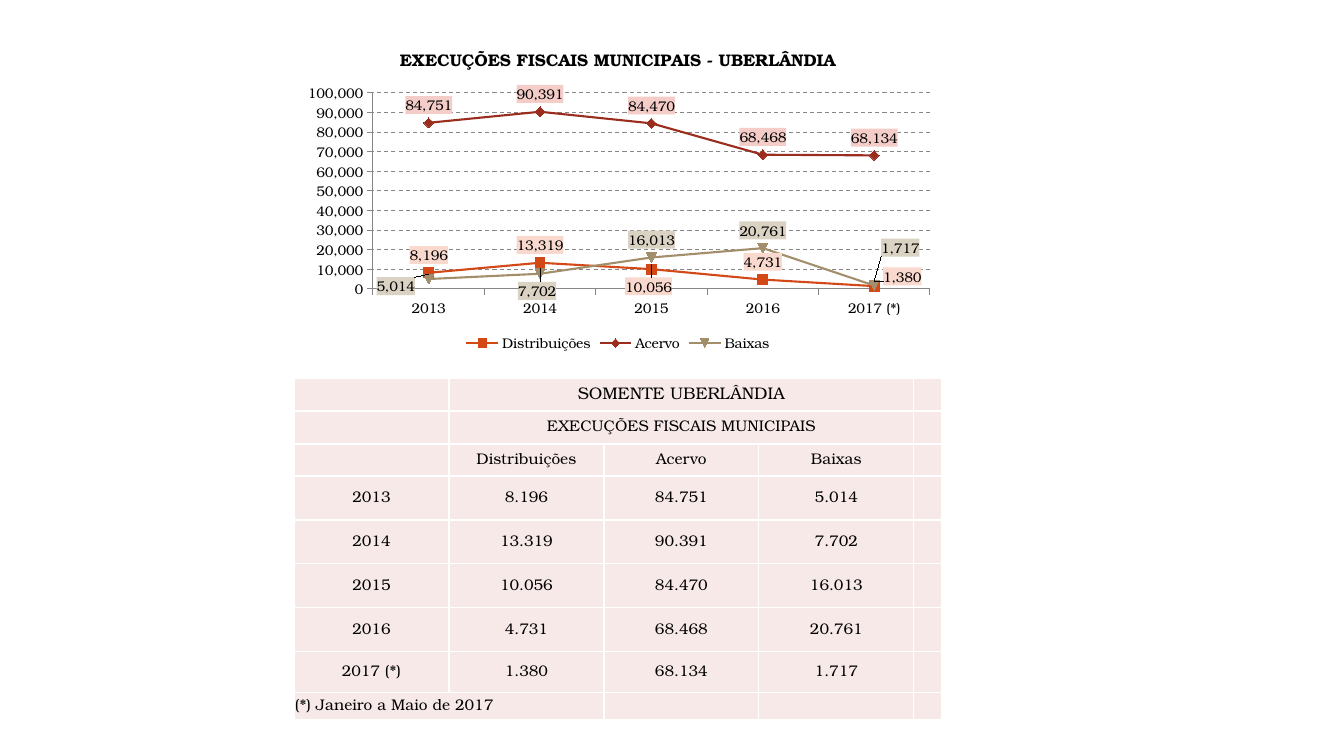
from copy import deepcopy

from lxml.etree import SubElement
from pptx import Presentation
from pptx.chart.data import CategoryChartData
from pptx.dml.color import RGBColor
from pptx.enum.chart import XL_CHART_TYPE as ChartType
from pptx.enum.chart import XL_LABEL_POSITION as LabelPosition
from pptx.enum.chart import XL_LEGEND_POSITION as LegendPosition
from pptx.enum.chart import XL_TICK_MARK as TickMark
from pptx.enum.dml import MSO_LINE_DASH_STYLE as Dash
from pptx.enum.text import MSO_ANCHOR as Anchor
from pptx.enum.text import PP_ALIGN as Align
from pptx.oxml import parse_xml
from pptx.oxml.ns import nsdecls, qn
from pptx.util import Emu, Pt

SCALE = 12192000 / 1344
FONT = "TeX Gyre Bonum"
BLACK = RGBColor(0x00, 0x00, 0x00)
WHITE = RGBColor(0xFF, 0xFF, 0xFF)
GRAY = RGBColor(0x86, 0x86, 0x86)
PINK = RGBColor(0xF7, 0xE9, 0xE8)
ORANGE = RGBColor(0xD3, 0x48, 0x17)
PALE_ORANGE = RGBColor(0xF9, 0xD8, 0xCD)
RED = RGBColor(0x9B, 0x2D, 0x1F)
PALE_RED = RGBColor(0xF4, 0xCD, 0xC8)
TAN = RGBColor(0xA2, 0x8E, 0x6A)
PALE_TAN = RGBColor(0xDA, 0xD2, 0xC3)

HEADING = "EXECUÇÕES FISCAIS MUNICIPAIS"
YEARS = ["2013", "2014", "2015", "2016", "2017 (*)"]
SERIES = [
    ("Distribuições", [8196, 13319, 10056, 4731, 1380], ORANGE, PALE_ORANGE,
     {2: (-3, 35), 4: (28, 8)}),
    ("Acervo", [84751, 90391, 84470, 68468, 68134], RED, PALE_RED, {}),
    ("Baixas", [5014, 7702, 16013, 20761, 1717], TAN, PALE_TAN,
     {0: (-33, 25), 1: (-3, 35), 4: (26, -20)}),
]
NUMBER_FORMAT = "#,##0"
CHART_BOX = (294, 31, 648, 325)
PLOT_BOX = (79, 62, 557, 196)
TABLE_BOX = (294, 378, 648, 340)
COLUMN_WIDTHS = [155] * 4 + [28]
ROW_HEIGHTS = [33, 33, 32] + [44] * 4 + [41, 25]


def px(value):
    return Emu(round(value * SCALE))


def format_font(font, size=10, bold=False, color=BLACK):
    font.name = FONT
    font.size = Pt(size)
    font.bold = bold
    font.color.rgb = color


def write_text(frame, text, size=11, bold=False, align=Align.CENTER):
    paragraph = frame.paragraphs[0]
    paragraph.alignment = align
    if text:
        run = paragraph.add_run()
        run.text = text
        format_font(run.font, size, bold)
    else:
        SubElement(paragraph._p, qn("a:endParaRPr"), sz=str(size * 100))


def manual_layout(x, y, width=None, height=None):
    parts = [("x", x / CHART_BOX[2]), ("y", y / CHART_BOX[3])]
    modes = ""
    if width:
        modes = ('<c:layoutTarget val="inner"/>'
                 '<c:xMode val="edge"/><c:yMode val="edge"/>')
        parts += [("w", width / CHART_BOX[2]), ("h", height / CHART_BOX[3])]
    values = "".join(f'<c:{name} val="{value:.4f}"/>' for name, value in parts)
    return parse_xml(f'<c:layout {nsdecls("c")}><c:manualLayout>{modes}{values}'
                     '</c:manualLayout></c:layout>')


def style_labels(series, pale, offsets):
    labels = series.data_labels
    labels.show_value = True
    labels.position = LabelPosition.ABOVE
    labels.number_format = NUMBER_FORMAT
    labels.number_format_is_linked = False
    format_font(labels.font)
    fill = parse_xml(f'<c:spPr {nsdecls("c", "a")}><a:solidFill>'
                     f'<a:srgbClr val="{pale}"/></a:solidFill></c:spPr>')
    for index in offsets:
        label = series.points[index].data_label
        label.position = LabelPosition.ABOVE
        format_font(label.font)
    element = labels._element
    for text in element.iter(qn("c:txPr")):
        text.addprevious(deepcopy(fill))
    for point in element.findall(qn("c:dLbl")):
        index = point.find(qn("c:idx"))
        index.addnext(manual_layout(*offsets[int(index.get("val"))]))


def style_series(series, color, pale, offsets):
    series.smooth = False
    series.format.line.color.rgb = color
    series.format.line.width = Pt(1.5)
    series.marker.size = 7
    series.marker.format.fill.solid()
    series.marker.format.fill.fore_color.rgb = color
    series.marker.format.line.color.rgb = color
    style_labels(series, pale, offsets)


def style_axis(axis):
    axis.major_tick_mark = TickMark.OUTSIDE
    axis.minor_tick_mark = TickMark.NONE
    axis.format.line.color.rgb = GRAY
    axis.format.line.width = Pt(0.75)
    format_font(axis.tick_labels.font)


def add_lawsuit_chart(slide):
    data = CategoryChartData(number_format=NUMBER_FORMAT)
    data.categories = YEARS
    for name, values, *_ in SERIES:
        data.add_series(name, values)
    chart = slide.shapes.add_chart(ChartType.LINE_MARKERS, *map(px, CHART_BOX), data).chart
    format_font(chart.font)
    chart.has_title = True
    write_text(chart.chart_title.text_frame, f"{HEADING} - UBERLÂNDIA", size=12, bold=True)
    chart.chart_title.include_in_layout = False
    chart.has_legend = True
    chart.legend.position = LegendPosition.BOTTOM
    chart.legend.include_in_layout = False
    format_font(chart.legend.font)

    plot = chart.plots[0]
    plot.vary_by_categories = False
    for series, (_, _, color, pale, offsets) in zip(plot.series, SERIES):
        style_series(series, color, pale, offsets)

    style_axis(chart.category_axis)
    axis = chart.value_axis
    style_axis(axis)
    axis.minimum_scale = 0
    axis.maximum_scale = 100000
    axis.major_unit = 10000
    axis.tick_labels.number_format = NUMBER_FORMAT
    axis.tick_labels.number_format_is_linked = False
    axis.has_major_gridlines = True
    axis.major_gridlines.format.line.color.rgb = GRAY
    axis.major_gridlines.format.line.width = Pt(0.75)
    axis.major_gridlines.format.line.dash_style = Dash.DASH

    area = chart._chartSpace.chart.plotArea
    for layout in area.findall(qn("c:layout")):
        area.remove(layout)
    area.insert(0, manual_layout(*PLOT_BOX))


def style_cell(cell, text, size, align, anchor):
    cell.margin_left = cell.margin_right = cell.margin_top = px(1)
    cell.margin_bottom = px(5)
    cell.vertical_anchor = anchor
    write_text(cell.text_frame, text, size=size, align=align)
    properties = cell._tc.get_or_add_tcPr()
    for side in ("lnL", "lnR", "lnT", "lnB"):
        properties.append(parse_xml(
            f'<a:{side} {nsdecls("a")} w="12700"><a:solidFill>'
            f'<a:srgbClr val="{WHITE}"/></a:solidFill></a:{side}>'))
    cell.fill.solid()
    cell.fill.fore_color.rgb = PINK


def add_lawsuit_table(slide):
    rows = [["", "SOMENTE UBERLÂNDIA"], ["", HEADING], [""] + [entry[0] for entry in SERIES]]
    for index, year in enumerate(YEARS):
        rows.append([year] + [f"{entry[1][index]:,}".replace(",", ".") for entry in SERIES])
    rows.append(["(*) Janeiro a Maio de 2017"])

    table = slide.shapes.add_table(len(rows), len(COLUMN_WIDTHS), *map(px, TABLE_BOX)).table
    table.first_row = table.horz_banding = False
    for column, width in zip(table.columns, COLUMN_WIDTHS):
        column.width = px(width)
    for row, height in zip(table.rows, ROW_HEIGHTS):
        row.height = px(height)
    last = len(rows) - 1
    for row_index, texts in enumerate(rows):
        size = 12 if row_index == 0 else 11
        align, anchor = (Align.LEFT, Anchor.BOTTOM) if row_index == last else (
            Align.CENTER, Anchor.MIDDLE)
        texts = texts + [""] * (len(COLUMN_WIDTHS) - len(texts))
        for column_index, text in enumerate(texts):
            style_cell(table.cell(row_index, column_index), text, size, align, anchor)
    for row_index, first, final in ((0, 1, 3), (1, 1, 3), (last, 0, 1)):
        table.cell(row_index, first).merge(table.cell(row_index, final))


def main():
    presentation = Presentation()
    presentation.slide_width = px(1344)
    presentation.slide_height = px(756)
    slide = presentation.slides.add_slide(presentation.slide_layouts[6])
    add_lawsuit_chart(slide)
    add_lawsuit_table(slide)
    presentation.save("out.pptx")


if __name__ == "__main__":
    main()
